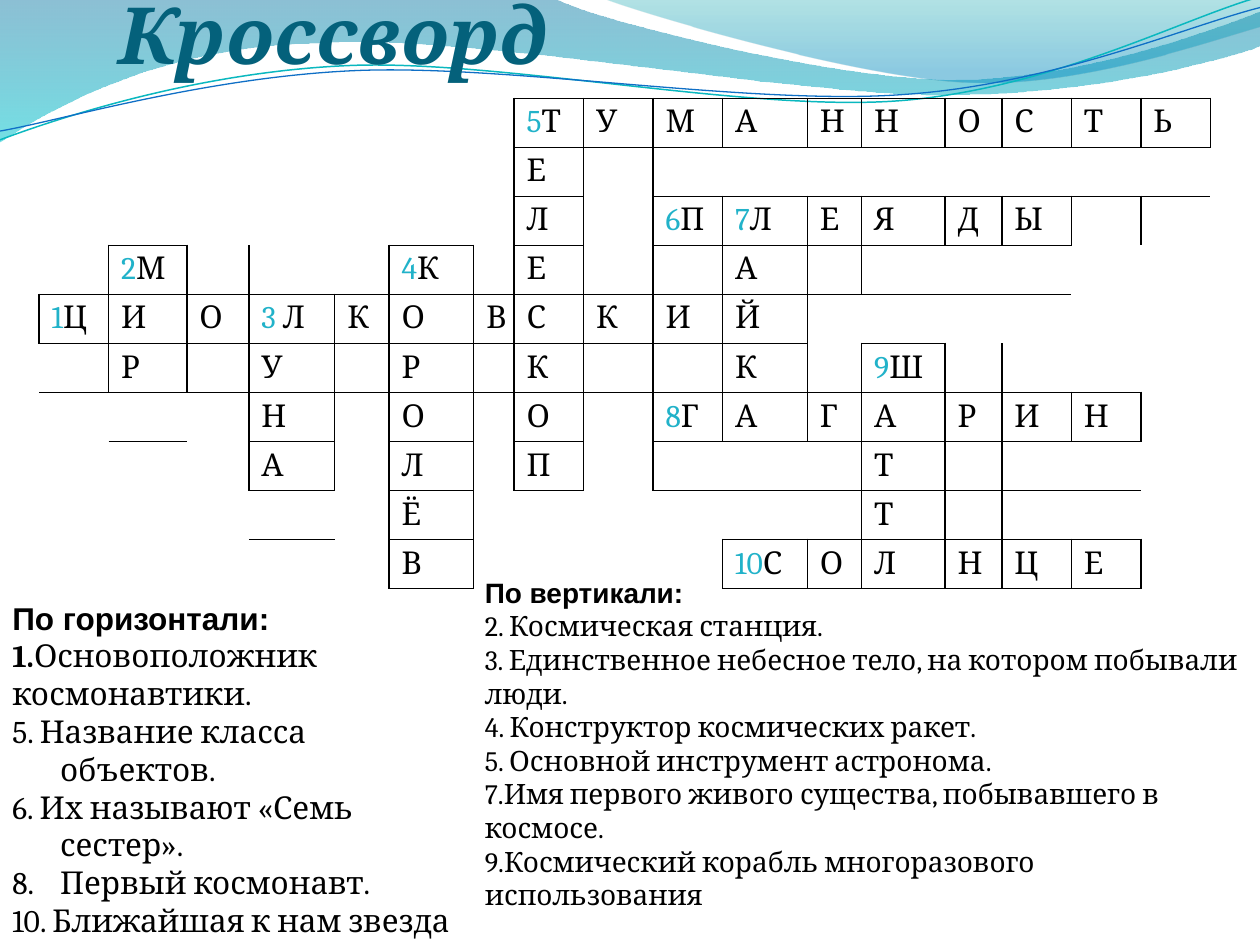
"""Build a space crossword slide with its wave header and clue lists."""
from dataclasses import dataclass
from math import cos, radians, sin

from lxml.etree import SubElement
from pptx import Presentation
from pptx.dml.color import RGBColor
from pptx.enum.text import MSO_ANCHOR, MSO_AUTO_SIZE, PP_ALIGN
from pptx.oxml.ns import qn
from pptx.util import Inches, Pt

BLACK = RGBColor(0x00, 0x00, 0x00)
TITLE_TEAL = RGBColor(0x04, 0x61, 0x7B)
NUMBER_CYAN = RGBColor(0x21, 0xB2, 0xC9)
DEEP_BLUE = RGBColor(0x00, 0x74, 0xA1)
AQUA = RGBColor(0x00, 0xC6, 0xCF)
SEA_GREEN = RGBColor(0x00, 0xA1, 0xA9)
SKY_BLUE = RGBColor(0x00, 0x8B, 0xBF)
LINE_TEAL = RGBColor(0x0A, 0xB8, 0xBF)
LINE_BLUE = RGBColor(0x0F, 0x6F, 0xC6)
SERIF, SANS = "Cambria", "Arial"
LINE_TILT, LINE_CENTER = -2.7, (4.99, 0.58)


@dataclass
class Stop:
    position: float
    color: RGBColor
    opacity: int


@dataclass
class Wave:
    segments: list[tuple[float, ...]]
    stops: tuple[Stop, ...] = ()
    line: RGBColor | None = None
    width: float = 0


@dataclass
class Clue:
    text: str
    lead: str = ""
    hanging: bool = False


@dataclass
class ClueList:
    box: tuple[float, float, float, float]
    size: int
    heading: str
    clues: list[Clue]


WAVES = [
    Wave([(0, 0), (4.4, -0.01), (4.76, 0.17, 6.64, 0.63, 7.58, 0.63),
          (8.53, 0.63, 9.58, 0.26, 10, 0.09), (10.01, 0.36),
          (9.83, 0.44, 8.7, 0.76, 7.46, 0.75), (6.22, 0.75, 3.82, 0.28, 2.57, 0.34),
          (1.29, 0.36, 0.46, 0.83, -0.01, 1.13), (0, 0)],
         (Stop(0, DEEP_BLUE, 45), Stop(1, AQUA, 55))),
    Wave([(4.79, -0.01), (5.09, 0.11, 6.82, 0.62, 7.69, 0.65),
          (8.56, 0.69, 9.61, 0.32, 10, 0.21), (10, 0), (4.79, -0.01)],
         (Stop(0, SEA_GREEN, 30), Stop(0.8, SKY_BLUE, 45))),
    Wave([(0, 1.11), (0.48, 0.93, 1.58, 0.57, 2.77, 0.52),
          (3.95, 0.47, 5.93, 0.89, 7.13, 0.8), (8.33, 0.71, 9.38, 0.15, 9.98, -0.02)],
         line=LINE_TEAL, width=0.85),
    Wave([(0, 1.04), (0.47, 0.96, 1.64, 0.61, 2.83, 0.56),
          (4.03, 0.51, 5.97, 0.84, 7.17, 0.75), (8.36, 0.67, 9.41, 0.21, 10, 0.06)],
         line=LINE_BLUE, width=0.75),
]
GRID = [
    ".......ТУМАННОСТЬ",
    ".......Е.........",
    ".......Л.ПЛЕЯДЫ..",
    ".М...К.Е..А......",
    "ЦИОЛКОВСКИЙ......",
    ".Р.У.Р.К..К.Ш....",
    "...Н.О.О.ГАГАРИН.",
    "...А.Л.П....Т....",
    ".....Ё......Т....",
    ".....В....СОЛНЦЕ.",
]
NUMBERS = {(4, 0): "1", (3, 1): "2", (4, 3): "3", (3, 5): "4", (0, 7): "5",
           (2, 9): "6", (2, 10): "7", (6, 9): "8", (5, 12): "9", (9, 10): "10"}
COLUMNS = [0.55, 0.62, 0.49, 0.68, 0.43, 0.67, 0.32, 0.55, 0.55,
           0.55, 0.67, 0.43, 0.66, 0.45, 0.55, 0.55, 0.55]
TABLE_WIDTH, ROW_HEIGHT = 9.3, 0.38
EXTRA_RULES = [(2, 15, 16), (4, 11, 14), (6, 0, 8), (7, 1, 1), (8, 9, 11), (8, 13, 15), (9, 3, 3)]
EXTRA_UPRIGHTS = {(1, 9), (2, 16), (3, 3), (3, 9), (3, 12), (5, 9),
                  (5, 14), (7, 9), (7, 14), (8, 14)}
CLUE_LISTS = [
    ClueList((0, 4.84, 3.67, 2.52), 18, "По горизонтали:", [
        Clue("Основоположник космонавтики.", lead="1."),
        Clue("5. Название класса объектов.", hanging=True),
        Clue("6. Их называют «Семь сестер».", hanging=True),
        Clue("8.\tПервый космонавт.", hanging=True),
        Clue("10. Ближайшая к нам звезда")]),
    ClueList((3.75, 4.77, 6.25, 2.26), 16, "По вертикали:", [
        Clue("2. Космическая станция."),
        Clue("3. Единственное небесное тело, на котором побывали люди."),
        Clue("4. Конструктор космических ракет."),
        Clue("5. Основной инструмент астронома."),
        Clue("7.Имя первого живого существа, побывавшего в космосе."),
        Clue("9.Космический корабль многоразового использования")]),
]


def set_font(font, name: str, size: float, color: RGBColor, bold: bool = False) -> None:
    font.name, font.size, font.bold = name, Pt(size), bold
    font.color.rgb = color


def turn(x: float, y: float, degrees: float) -> tuple[float, float]:
    """Turn a point clockwise about the centre of the wave lines."""
    cx, cy = LINE_CENTER
    c, s = cos(radians(degrees)), sin(radians(degrees))
    return cx + (x - cx) * c - (y - cy) * s, cy + (x - cx) * s + (y - cy) * c


def add_curve(shapes, wave: Wave, tilt: float):
    """Add a freeform whose three-point segments are cubic curves."""
    points = [turn(*pair, -tilt) for seg in wave.segments for pair in zip(seg[::2], seg[1::2])]
    start, *rest = [(Inches(x), Inches(y)) for x, y in points]
    builder = shapes.build_freeform(*start)
    builder.add_line_segments(rest, close=bool(wave.stops))
    sp = builder.convert_to_shape()
    sp.rotation = tilt
    lines = iter(list(sp._element.iter(qn("a:lnTo"))))
    for segment in wave.segments[1:]:
        line = next(lines)
        if len(segment) == 6:
            line.addprevious(curve := line.makeelement(qn("a:cubicBezTo")))
            for part in (line, next(lines), next(lines)):
                curve.append(part[0])
                part.getparent().remove(part)
    return sp


def draw_wave(shapes, wave: Wave) -> None:
    sp = add_curve(shapes, wave, 0 if wave.stops else LINE_TILT)
    sp.shadow.inherit = False
    if wave.line is not None:
        sp.fill.background()
        sp.line.color.rgb, sp.line.width = wave.line, Pt(wave.width)
        return
    sp.line.fill.background()
    sp.fill.gradient()
    sp.fill.gradient_angle = 270
    for target, stop in zip(sp.fill.gradient_stops, wave.stops):
        target.position, target.color.rgb = stop.position, stop.color
    for color, stop in zip(sp._element.spPr.iter(qn("a:srgbClr")), wave.stops):
        SubElement(color, qn("a:alpha"), val=str(stop.opacity * 1000))


def set_borders(cell, sides: dict[str, bool]) -> None:
    """Draw or hide each side; borders precede the fill in the cell properties."""
    tc_pr = cell._tc.get_or_add_tcPr()
    for side, visible in sides.items():
        ln = SubElement(tc_pr, qn(f"a:{side}"), w=str(Pt(1)))
        fill = SubElement(ln, qn("a:solidFill" if visible else "a:noFill"))
        if visible:
            SubElement(fill, qn("a:srgbClr"), val=str(BLACK))
    cell.fill.background()


def draw_crossword(shapes) -> None:
    letters = {(r, c): letter for r, row in enumerate(GRID)
               for c, letter in enumerate(row) if letter != "."}
    rules = {(r + d, c) for r, c in letters for d in (0, 1)}
    rules |= {(r, c) for r, first, last in EXTRA_RULES for c in range(first, last + 1)}
    uprights = {(r, c + d) for r, c in letters for d in (0, 1)} | EXTRA_UPRIGHTS
    table = shapes.add_table(len(GRID), len(COLUMNS), Inches(0.31), Inches(0.78),
                             Inches(TABLE_WIDTH), Inches(ROW_HEIGHT * len(GRID))).table
    table.first_row = table.horz_banding = False
    for column, width in zip(table.columns, COLUMNS):
        column.width = Inches(width * TABLE_WIDTH / sum(COLUMNS))
    for r, row in enumerate(table.rows):
        row.height = Inches(ROW_HEIGHT)
        for c, cell in enumerate(row.cells):
            set_borders(cell, {"lnL": (r, c) in uprights, "lnR": (r, c + 1) in uprights,
                               "lnT": (r, c) in rules, "lnB": (r + 1, c) in rules})
            if (r, c) not in letters:
                cell.margin_top = cell.margin_bottom = 0
                continue
            p = cell.text_frame.paragraphs[0]
            letter = " Л" if (r, c) == (4, 3) else letters[r, c]
            for text, color in ((NUMBERS.get((r, c)), NUMBER_CYAN), (letter, BLACK)):
                if text:
                    run = p.add_run()
                    run.text = text
                    set_font(run.font, SERIF, 18, color)


def draw_clues(shapes, clue_list: ClueList) -> None:
    tf = shapes.add_textbox(*map(Inches, clue_list.box)).text_frame
    tf.word_wrap, tf.vertical_anchor = True, MSO_ANCHOR.MIDDLE
    tf.auto_size = MSO_AUTO_SIZE.SHAPE_TO_FIT_TEXT
    p = tf.paragraphs[0]
    p.text = clue_list.heading
    set_font(p.font, SANS, clue_list.size, BLACK, bold=True)
    for clue in clue_list.clues:
        p = tf.add_paragraph()
        set_font(p.font, SERIF, clue_list.size, BLACK)
        if clue.hanging:
            p._p.get_or_add_pPr().set("marL", str(Inches(0.38)))
            p._p.get_or_add_pPr().set("indent", str(-Inches(0.38)))
        if clue.lead:
            r = p.add_run()
            r.text, r.font.bold = clue.lead, True
        p.add_run().text = clue.text


def draw_title(shapes, text: str) -> None:
    title = shapes.title
    shapes._spTree.append(title._element)
    title.left, title.top, title.width, title.height = map(Inches, (0.94, 0.16, 4.34, 0.48))
    tf = title.text_frame
    tf.text = text
    tf.margin_left = tf.margin_right = tf.margin_bottom = 0
    tf.vertical_anchor, tf.auto_size = MSO_ANCHOR.BOTTOM, MSO_AUTO_SIZE.NONE
    p = tf.paragraphs[0]
    p.alignment = PP_ALIGN.LEFT
    set_font(p.font, SERIF, 45, TITLE_TEAL, bold=True)
    p.font.italic = True


def main() -> None:
    prs = Presentation()
    prs.slide_width, prs.slide_height = Inches(10), Inches(7.5)
    shapes = prs.slides.add_slide(prs.slide_layouts[5]).shapes
    for wave in WAVES:
        draw_wave(shapes, wave)
    draw_title(shapes, "Кроссворд")
    draw_crossword(shapes)
    for clue_list in CLUE_LISTS:
        draw_clues(shapes, clue_list)
    prs.save("out.pptx")


if __name__ == "__main__":
    main()
